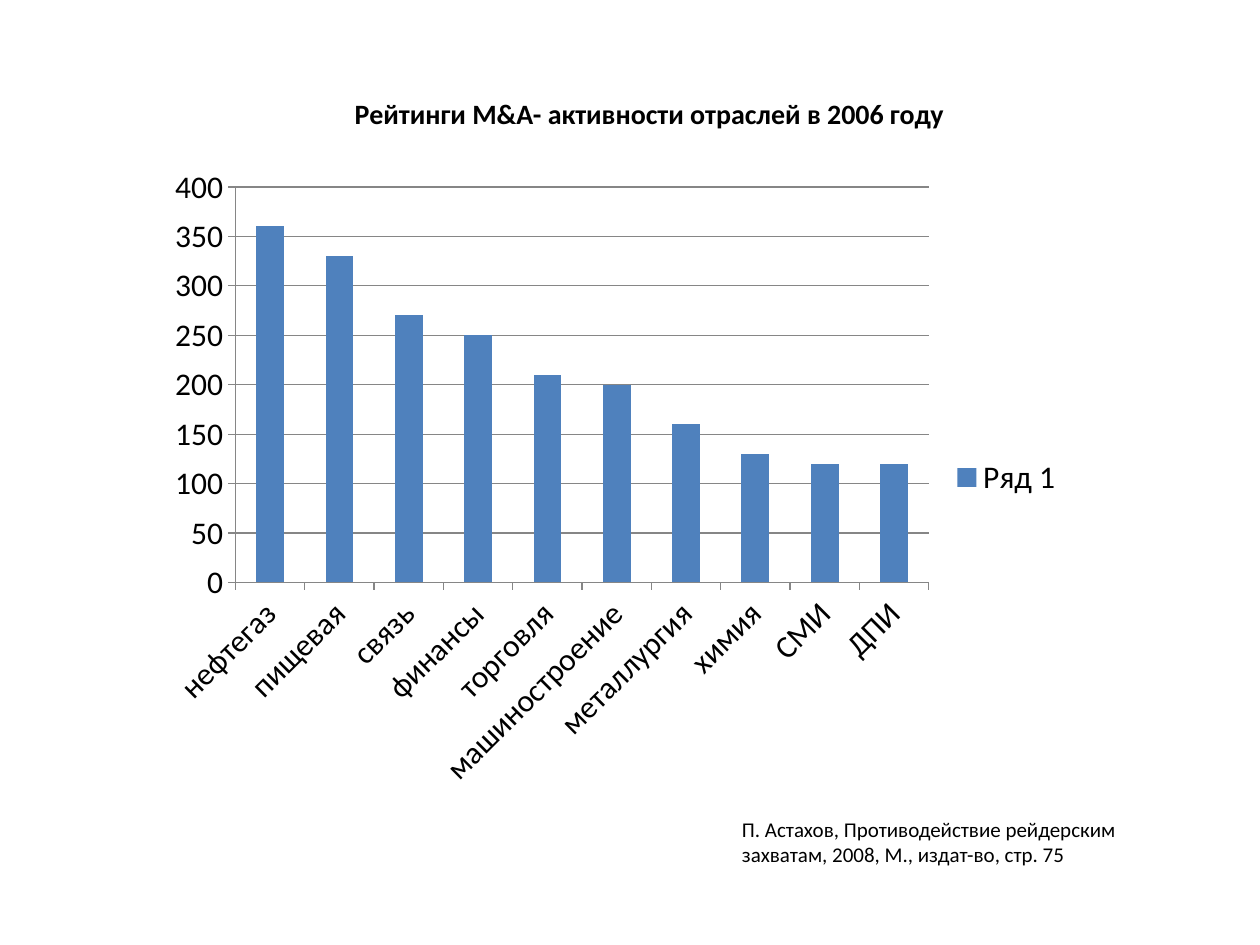
from dataclasses import dataclass

from pptx import Presentation
from pptx import util as u
from pptx.chart.data import CategoryChartData
from pptx.dml.color import RGBColor
from pptx.enum import chart as ch
from pptx.enum import shapes, text

WHITE = RGBColor(0xFF, 0xFF, 0xFF)
BLACK = RGBColor(0, 0, 0)
BLUE = RGBColor(0x4F, 0x81, 0xBD)
GREY = RGBColor(0x86, 0x86, 0x86)
FONT = "Calibri"

RATINGS = {
    "нефтегаз": 360, "пищевая": 330, "связь": 270, "финансы": 250,
    "торговля": 210, "машиностроение": 200, "металлургия": 160,
    "химия": 130, "СМИ": 120, "ДПИ": 120,
}


@dataclass
class Caption:
    words: str
    left: float
    top: float
    width: float
    height: float
    size: int
    align: text.PP_ALIGN
    bold: bool = False


TITLE = Caption("Рейтинги M&A- активности отраслей в 2006 году",
                1.85, 0.65, 6.61, 0.5, 16, text.PP_ALIGN.CENTER, True)
SOURCE = Caption("П. Астахов, Противодействие рейдерским захватам, 2008, М., издат-во, стр. 75",
                 5.79, 6.43, 3.68, 0.5, 12, text.PP_ALIGN.LEFT)


def fill_caption(box, caption: Caption) -> None:
    """Place a white box and write its caption."""
    box.left, box.top = u.Inches(caption.left), u.Inches(caption.top)
    box.width, box.height = u.Inches(caption.width), u.Inches(caption.height)
    box.fill.solid()
    box.fill.fore_color.rgb = WHITE
    box.line.color.rgb = WHITE
    box.line.width = u.Pt(2)

    frame = box.text_frame
    frame.word_wrap = True
    frame.auto_size = text.MSO_AUTO_SIZE.NONE
    frame.vertical_anchor = text.MSO_ANCHOR.MIDDLE
    para = frame.paragraphs[0]
    para.alignment = caption.align
    span = para.add_run()
    span.text = caption.words
    span.font.name = FONT
    span.font.size = u.Pt(caption.size)
    span.font.bold = caption.bold
    span.font.color.rgb = BLACK


def style_axis(axis) -> None:
    axis.major_tick_mark = ch.XL_TICK_MARK.OUTSIDE
    axis.minor_tick_mark = ch.XL_TICK_MARK.NONE
    axis.format.line.color.rgb = GREY
    axis.format.line.width = u.Pt(0.75)


def add_rating_chart(page) -> None:
    data = CategoryChartData()
    data.categories = list(RATINGS)
    data.add_series("Ряд 1", list(RATINGS.values()))
    chart = page.shapes.add_chart(
        ch.XL_CHART_TYPE.COLUMN_STACKED, u.Inches(1.22), u.Inches(1.23),
        u.Inches(7.32), u.Inches(5.12), data).chart
    chart.has_title = False
    chart.font.name = FONT
    chart.font.size = u.Pt(18)
    chart.font.color.rgb = BLACK

    chart.has_legend = True
    chart.legend.position = ch.XL_LEGEND_POSITION.RIGHT
    chart.legend.include_in_layout = False

    style_axis(chart.category_axis)
    style_axis(chart.value_axis)
    chart.value_axis.minimum_scale = 0
    chart.value_axis.maximum_scale = 400
    chart.value_axis.major_unit = 50
    chart.value_axis.has_major_gridlines = True
    gridline = chart.value_axis.major_gridlines.format.line
    gridline.color.rgb = GREY
    gridline.width = u.Pt(0.75)

    plot = chart.plots[0]
    plot.gap_width = 150
    plot.overlap = 100
    plot.vary_by_categories = False
    columns = plot.series[0].format.fill
    columns.solid()
    columns.fore_color.rgb = BLUE


def main() -> None:
    deck = Presentation()
    deck.slide_width, deck.slide_height = u.Inches(10), u.Inches(7.5)
    page = deck.slides.add_slide(deck.slide_layouts.get_by_name("Title Only"))
    page.background.fill.solid()
    page.background.fill.fore_color.rgb = WHITE

    fill_caption(page.shapes.title, TITLE)
    add_rating_chart(page)
    source_box = page.shapes.add_shape(shapes.MSO_SHAPE.RECTANGLE, 0, 0, 0, 0)
    source_box.shadow.inherit = False
    fill_caption(source_box, SOURCE)
    deck.save("out.pptx")


if __name__ == "__main__":
    main()
